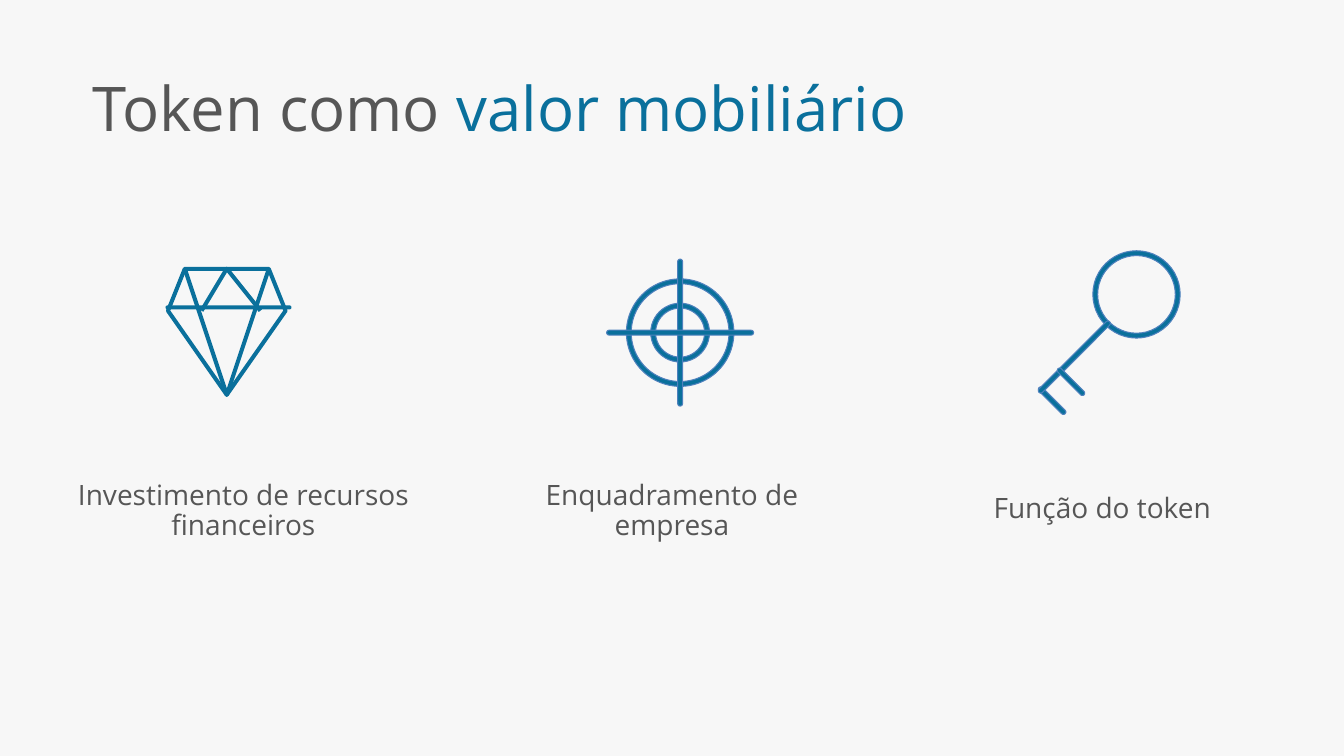
"""Build a slide on tokens as securities: a title and three captioned icons."""
from lxml import etree
from pptx import Presentation
from pptx.dml.color import RGBColor
from pptx.enum.shapes import MSO_SHAPE
from pptx.enum.text import MSO_ANCHOR, PP_ALIGN
from pptx.oxml.ns import qn
from pptx.util import Emu, Inches, Pt

PAPER = RGBColor(0xF7, 0xF7, 0xF7)
GREY = RGBColor(0x56, 0x56, 0x56)
TEAL = RGBColor(0x0A, 0x70, 0x9C)
EDGE = RGBColor(0x4F, 0x81, 0xBD)

deck = Presentation()
deck.slide_width, deck.slide_height = Emu(12192000), Inches(7.5)
CELL = deck.slide_width / 160
slide = deck.slides.add_slide(deck.slide_layouts[6])
slide.background.fill.solid()
slide.background.fill.fore_color.rgb = PAPER
shapes = slide.shapes


def write(box, runs, size, align):
    """Add a text box, placed in grid cells, with coloured runs."""
    frame = shapes.add_textbox(*(Emu(round(n * CELL)) for n in box)).text_frame
    layout = {"word_wrap": True, "vertical_anchor": MSO_ANCHOR.MIDDLE,
              "margin_left": 0, "margin_right": Inches(0.1),
              "margin_top": Inches(0.05), "margin_bottom": Inches(0.05)}
    for key, value in layout.items():
        setattr(frame, key, value)
    para = frame.paragraphs[0]
    para.alignment, para.line_spacing = align, 0.9
    for text, color in runs:
        run = para.add_run()
        run.text = text
        for key, value in {"name": "Open Sans", "size": Pt(size)}.items():
            setattr(run.font, key, value)
        run.font.color.rgb = color


def draw(kind, mid, wide, high, adjust, edge=True, angle=0):
    """Add a teal preset shape around a midpoint given in grid cells."""
    box = (mid[0] - wide / 2, mid[1] - high / 2, wide, high)
    shape = shapes.add_shape(kind, *(Emu(round(n * CELL)) for n in box))
    shape.shadow.inherit = False
    shape.adjustments[0] = adjust
    shape.rotation = angle
    shape.fill.solid()
    shape.fill.fore_color.rgb = TEAL
    if edge:
        shape.line.color.rgb, shape.line.width = EDGE, Pt(0.75)
    else:
        shape.line.fill.background()


write((11.04, 8.64, 106.2, 9.36),
      [("Token como ", GREY), ("valor mobiliário", TEAL)], 44, PP_ALIGN.LEFT)

captions = [("Investimento de recursos financeiros", 8.4, 56.28, 42.36, 9.24),
            ("Enquadramento de empresa", 63.48, 56.28, 34.2, 9.24),
            ("Função do token", 114.72, 57.96, 34.2, 5.28)]
for text, *box in captions:
    write(box, [(text, GREY)], 20, PP_ALIGN.CENTER)

THICK = 0.58
TARGET = (80.97, 39.6)
rings = [((135.3, 35.05), 10.4), (TARGET, 12.8), (TARGET, 7)]
for mid, size in rings:
    draw(MSO_SHAPE.DONUT, mid, size, size, THICK / size)

bars = [((125.25, 47.7), 4.4, 45), ((127.9, 42.5), 11.9, -45),
        ((127.5, 45.45), 4.4, 45), (TARGET, 17.5, 90), (TARGET, 17.5, 0)]
for mid, size, angle in bars:
    draw(MSO_SHAPE.ROUNDED_RECTANGLE, mid, size, THICK, 0.5, angle=angle)

GEM, TOP, WAIST, TIP = 27.2, 32.4, 36.6, 46.8
draw(MSO_SHAPE.ROUNDED_RECTANGLE, (GEM, WAIST), 15, 0.48, 0.5, edge=False)
facets = [([(-7.3, WAIST), (-4.85, TOP), (4.85, TOP), (7.3, WAIST), (0, TIP)], True),
          ([(-4.85, TOP), (0, TIP), (4.85, TOP)], False),
          ([(-3.45, WAIST), (0, TOP), (3.45, WAIST)], False)]
for points, close in facets:
    spots = [(GEM + x, y) for x, y in points]
    pen = shapes.build_freeform(*spots[0], scale=CELL)
    pen.add_line_segments(spots[1:], close=close)
    facet = pen.convert_to_shape()
    facet.shadow.inherit = False
    facet.fill.background()
    facet.line.color.rgb, facet.line.width = TEAL, Pt(2.9)
    etree.SubElement(facet.line._get_or_add_ln(), qn("a:round"))

deck.save("out.pptx")
